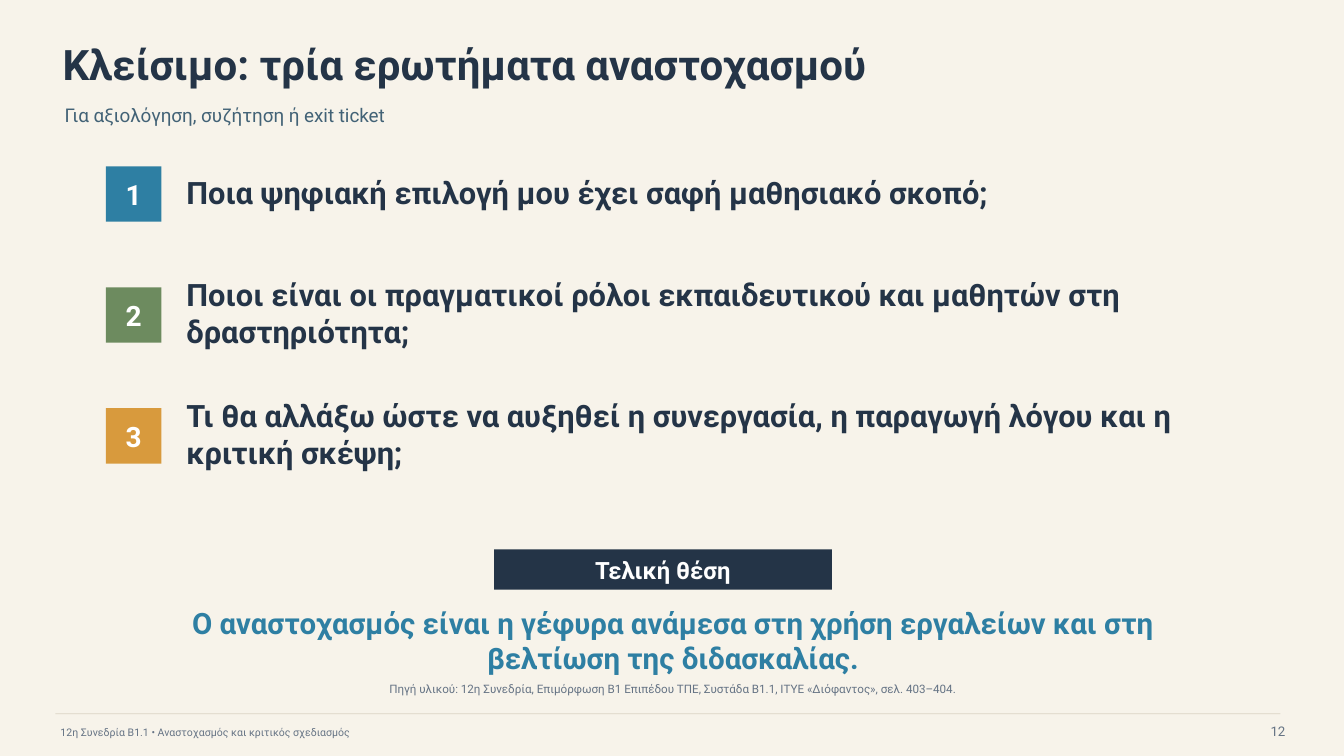
from dataclasses import dataclass

from lxml import etree
from pptx import Presentation
from pptx.dml.color import RGBColor
from pptx.enum.shapes import MSO_CONNECTOR, MSO_SHAPE
from pptx.enum.text import MSO_ANCHOR, MSO_AUTO_SIZE, PP_ALIGN
from pptx.oxml.ns import qn
from pptx.util import Inches, Pt


@dataclass(frozen=True)
class Theme:
    font: str = "Roboto"
    paper: str = "F7F3EA"
    ink: str = "243447"
    slate: str = "426276"
    muted: str = "657384"
    rule: str = "D8D0C1"
    white: str = "FFFFFF"
    blue: str = "2E7FA3"
    green: str = "6D8B5F"
    amber: str = "D89A3D"
    title: float = 30
    question: float = 22
    closing: float = 21
    badge: float = 20
    label: float = 17
    subtitle: float = 13.5
    page_number: float = 9.5
    source: float = 8.3
    footer: float = 7.5


theme = Theme()


def write(shape, text, size, color, bold=False, align=PP_ALIGN.LEFT):
    frame = shape.text_frame
    frame.text = text
    frame.word_wrap = True
    frame.auto_size = MSO_AUTO_SIZE.NONE
    frame.vertical_anchor = MSO_ANCHOR.MIDDLE
    frame.margin_left = frame.margin_right = 0
    frame.margin_top = frame.margin_bottom = 0
    para = frame.paragraphs[0]
    para.alignment = align
    for span in para.runs:
        span.font.name = theme.font
        span.font.size = Pt(size)
        span.font.bold = bold
        span.font.color.rgb = RGBColor.from_string(color)


def add_block(page, place, fill):
    block = page.shapes.add_shape(MSO_SHAPE.RECTANGLE, *map(Inches, place))
    block.shadow.inherit = False
    block.fill.solid()
    block.fill.fore_color.rgb = RGBColor.from_string(fill)
    block.line.fill.background()
    return block


deck = Presentation()
deck.slide_width, deck.slide_height = Inches(13.33), Inches(7.5)
page = deck.slides.add_slide(deck.slide_layouts[5])
page.background.fill.solid()
page.background.fill.fore_color.rgb = RGBColor.from_string(theme.paper)

# Title
title = page.shapes.title
title.left, title.top = Inches(0.62), Inches(0.36)
title.width, title.height = Inches(9.9), Inches(0.55)
write(title, "Κλείσιμο: τρία ερωτήματα αναστοχασμού", theme.title, theme.ink, True)

# Numbered questions
questions = [
    ("Ποια ψηφιακή επιλογή μου έχει σαφή μαθησιακό σκοπό;", theme.blue),
    ("Ποιοι είναι οι πραγματικοί ρόλοι εκπαιδευτικού και μαθητών στη δραστηριότητα;",
     theme.green),
    ("Τι θα αλλάξω ώστε να αυξηθεί η συνεργασία, η παραγωγή λόγου και η κριτική σκέψη;",
     theme.amber),
]
for index, (question, color) in enumerate(questions):
    top = 1.65 + 1.2 * index
    badge = add_block(page, (1.05, top, 0.55, 0.55), color)
    write(badge, str(index + 1), theme.badge, theme.white, True, PP_ALIGN.CENTER)
    box = page.shapes.add_textbox(
        Inches(1.85), Inches(top + 0.03), Inches(10.4), Inches(0.45))
    write(box, question, theme.question, theme.ink, True)

# Closing label
label = add_block(page, (4.9, 5.45, 3.35, 0.4), theme.ink)
write(label, "Τελική θέση", theme.label, theme.white, True, PP_ALIGN.CENTER)

# Subtitle, closing statement, source and footer
texts = [
    ((0.64, 0.96, 10.2, 0.36), "Για αξιολόγηση, συζήτηση ή exit ticket",
     theme.subtitle, theme.slate, False, PP_ALIGN.LEFT),
    ((1.7, 6.1, 9.95, 0.5),
     "Ο αναστοχασμός είναι η γέφυρα ανάμεσα στη χρήση εργαλείων και στη "
     "βελτίωση της διδασκαλίας.",
     theme.closing, theme.blue, True, PP_ALIGN.CENTER),
    ((0.72, 6.74, 11.9, 0.18),
     "Πηγή υλικού: 12η Συνεδρία, Επιμόρφωση Β1 Επιπέδου ΤΠΕ, Συστάδα Β1.1, "
     "ΙΤΥΕ «Διόφαντος», σελ. 403–404.",
     theme.source, theme.muted, False, PP_ALIGN.CENTER),
    ((0.6, 7.17, 8.7, 0.18),
     "12η Συνεδρία Β1.1 • Αναστοχασμός και κριτικός σχεδιασμός",
     theme.footer, theme.muted, False, PP_ALIGN.LEFT),
    ((12.15, 7.11, 0.6, 0.28), "12",
     theme.page_number, theme.muted, False, PP_ALIGN.RIGHT),
]
for place, text, *style in texts:
    box = page.shapes.add_textbox(*map(Inches, place))
    write(box, text, *style)

# Footer rule, slightly transparent
rule = page.shapes.add_connector(
    MSO_CONNECTOR.STRAIGHT, Inches(0.55), Inches(7.08), Inches(12.7), Inches(7.08))
rule.line.color.rgb = RGBColor.from_string(theme.rule)
rule.line.width = Pt(0.5)
rule_color = rule.line._ln.find(".//" + qn("a:srgbClr"))
etree.SubElement(rule_color, qn("a:alpha")).set("val", "90000")
etree.SubElement(rule._element.spPr, qn("a:effectLst"))

deck.save("out.pptx")
